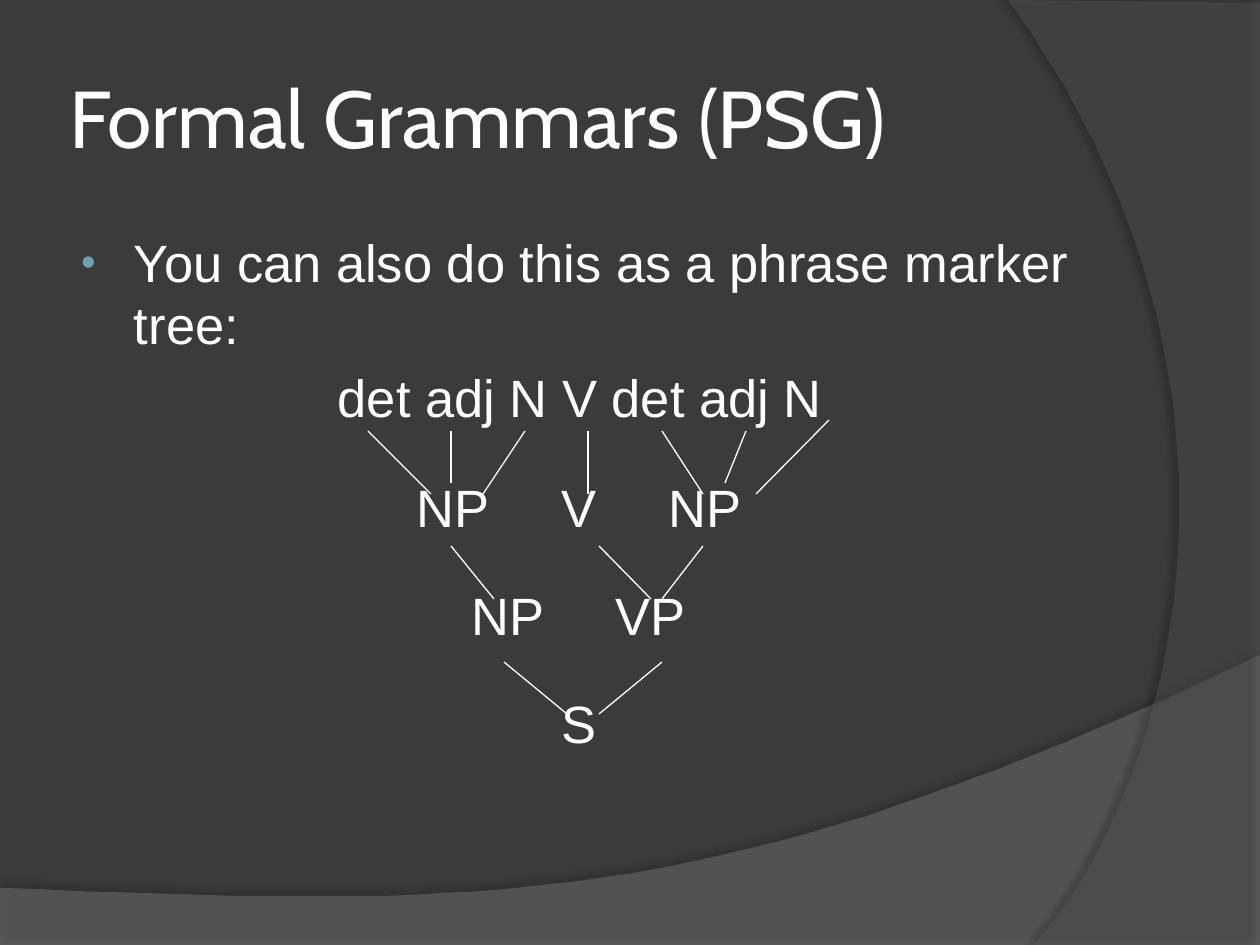
"""Build a slide showing a phrase marker tree for a formal grammar."""
from lxml.etree import SubElement
from pptx import Presentation
from pptx.dml.color import RGBColor
from pptx.enum.shapes import MSO_CONNECTOR as Connector
from pptx.enum.text import MSO_ANCHOR as Anchor, PP_ALIGN as Align
from pptx.oxml import parse_xml
from pptx.oxml.ns import nsdecls, qn
from pptx.util import Pt

PX = 914400 / 126
COLORS = {"back": "3B3B3B", "wave": "7C7C7C", "arc": "595959",
          "text": "FFFFFF", "bullet": "6EA0B0", "shadow": "000000"}


def add_text(left, top, width, height, lines, size, font, inset):
    box = page.shapes.add_textbox(*(round(n * PX) for n in (left, top, width, height)))
    frame = box.text_frame
    frame.word_wrap = True
    frame.margin_left = frame.margin_right = round(inset * PX)
    frame.margin_top = frame.margin_bottom = round(min(inset, 6) * PX)
    frame.text = "\n".join(lines)
    for para in frame.paragraphs:
        for span in para.runs:
            span.font.size = Pt(size)
            span.font.name = font
            span.font.color.rgb = RGBColor.from_string(COLORS["text"])
    return frame


def add_swoosh(corners, curve, color, opacity, shadow_opacity, distance, angle):
    points = list(corners)
    for step in range(1, 41):
        t = step / 40
        weights = ((1 - t) ** 3, 3 * t * (1 - t) ** 2, 3 * t * t * (1 - t), t ** 3)
        points.append(tuple(sum(w * p[axis] for w, p in zip(weights, curve))
                            for axis in (0, 1)))
    builder = page.shapes.build_freeform(*points[0], scale=PX)
    builder.add_line_segments(points[1:], close=True)
    shape = builder.convert_to_shape()
    shape.line.fill.background()
    shape.fill.solid()
    shape.fill.fore_color.rgb = RGBColor.from_string(COLORS[color])
    fill_color = shape.fill._xPr.find(qn("a:solidFill"))[0]
    SubElement(fill_color, qn("a:alpha"), val=str(opacity * 1000))
    shape.shadow.inherit = False
    effects = shape._element.spPr.find(qn("a:effectLst"))
    effects.append(parse_xml(
        f'<a:outerShdw {nsdecls("a")} blurRad="{Pt(4)}" dist="{Pt(distance)}" '
        f'dir="{angle * 60000}" algn="ctr" rotWithShape="0">'
        f'<a:srgbClr val="{COLORS["shadow"]}"><a:alpha val="{shadow_opacity * 1000}"/>'
        '</a:srgbClr></a:outerShdw>'))


deck = Presentation()
deck.slide_width = round(1260 * PX)
deck.slide_height = round(945 * PX)
page = deck.slides.add_slide(deck.slide_layouts[6])
page.background.fill.solid()
page.background.fill.fore_color.rgb = RGBColor.from_string(COLORS["back"])

add_swoosh([(0, 888), (0, 946), (1260, 946), (1260, 655)],
           [(1260, 655), (704, 919), (493, 906), (0, 888)], "wave", 45, 35, 3.5, 270)
add_swoosh([(1260, 3), (1260, 945), (1034, 945)],
           [(1034, 945), (1178, 780), (1283, 378), (1008, 0)], "arc", 40, 45, 4, 180)

title = add_text(63, 38, 1029, 157, ["Formal Grammars (PSG)"], 46, "Cabin", 6)
title.vertical_anchor = Anchor.MIDDLE

body = add_text(63, 225, 1029, 210,
                ["You can also do this as a phrase marker tree:", "det adj N V det adj N"],
                30, "Arial", 13)
intro, categories = body.paragraphs
for para in (intro, categories):
    para.line_spacing = Pt(35.5)
    props = para._p.get_or_add_pPr()
    props.set("marL", str(round(58 * PX)))
    props.set("indent", str(round(-53 * PX)))
categories.alignment = Align.CENTER
categories.space_before = Pt(6)
props = intro._p.get_or_add_pPr()
SubElement(SubElement(props, qn("a:buClr")), qn("a:srgbClr"), val=COLORS["bullet"])
SubElement(props, qn("a:buSzPct"), val="80000")
SubElement(props, qn("a:buFont"), typeface="Arial")
SubElement(props, qn("a:buChar"), char="•")

tree_rows = [
    [("NP", 453), ("V", 579), ("NP", 705)],
    [("NP", 508), ("VP", 651)],
    [("S", 579)],
]
for level, nodes in enumerate(tree_rows):
    for label, center in nodes:
        node = add_text(center - 50, 475 + 108 * level, 100, 60, [label], 30, "Arial", 0)
        node.paragraphs[0].alignment = Align.CENTER

branches = [
    (368, 431, 431, 494), (451, 431, 451, 483), (525, 431, 483, 494),
    (588, 431, 588, 494), (662, 431, 703, 494), (746, 431, 725, 483),
    (829, 420, 756, 494),
    (451, 546, 494, 599), (599, 546, 651, 599), (703, 546, 662, 599),
    (504, 662, 567, 714), (662, 662, 599, 714),
]
for ends in branches:
    branch = page.shapes.add_connector(Connector.STRAIGHT, *(round(n * PX) for n in ends))
    branch.line.color.rgb = RGBColor.from_string(COLORS["text"])
    branch.line.width = Pt(0.75)
    SubElement(branch._element.spPr, qn("a:effectLst"))

deck.save("out.pptx")
